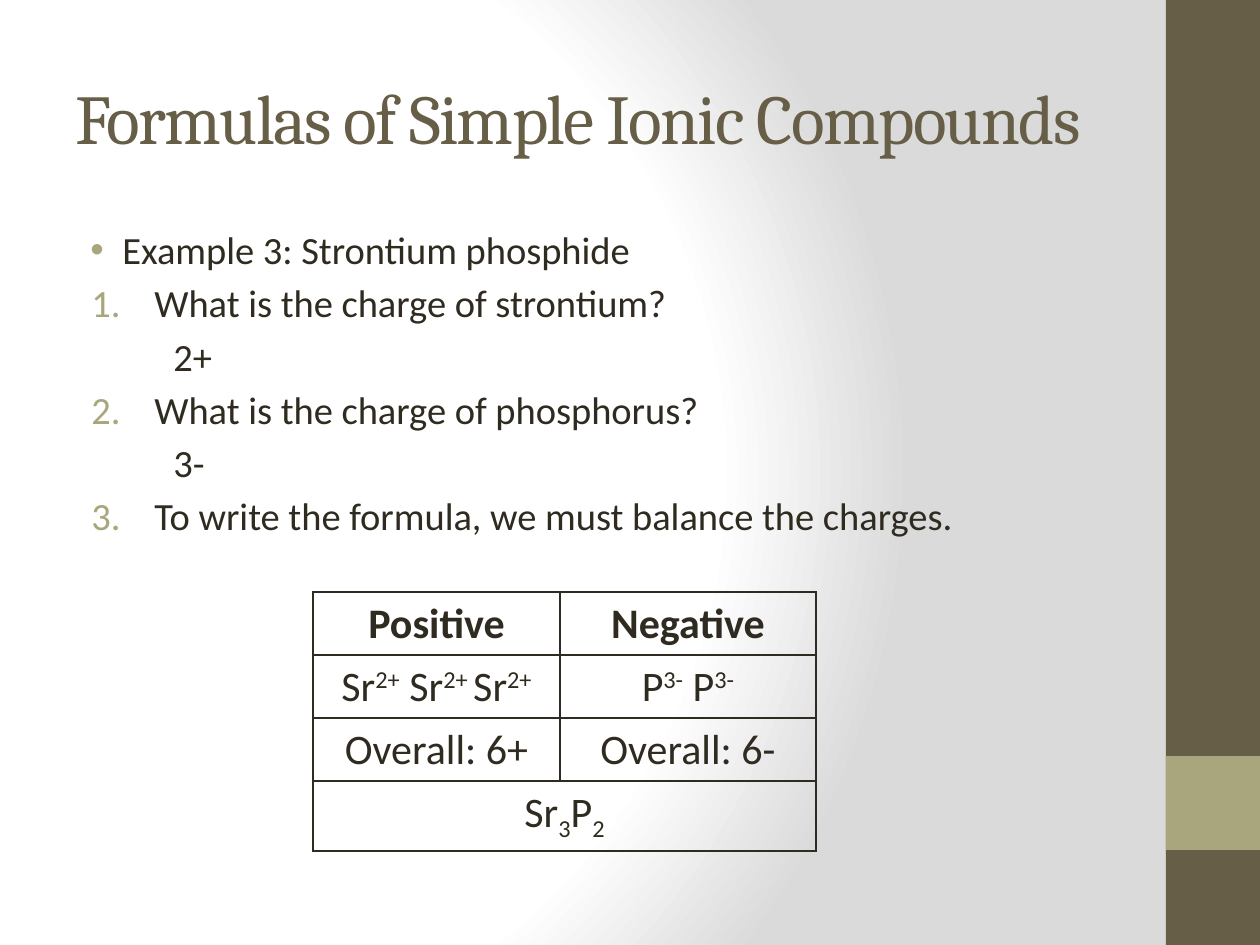
from pptx import Presentation
from pptx.dml.color import RGBColor
from pptx.enum.shapes import MSO_SHAPE
from pptx.enum.text import MSO_ANCHOR, PP_ALIGN
from pptx.oxml import parse_xml
from pptx.oxml.ns import nsdecls
from pptx.util import Pt
from lxml.etree import SubElement
from pptx.oxml.ns import qn

SCALE = 914400 // 126
HUES = {"brown": "675E47", "olive": "A9A57C", "ink": "2F2B20",
        "white": "FFFFFF", "gray": "DADADA"}
LINES = [
    ("Example 3: Strontium phosphide", "•"),
    ("What is the charge of strontium?", 1),
    ("2+", None),
    ("What is the charge of phosphorus?", 2),
    ("3-", None),
    ("To write the formula, we must balance the charges.", 3),
]
ROWS = [
    (["Positive", "Negative"], 0),
    (["Sr|2+| Sr|2+ |Sr|2+", "P|3-| P|3-"], 30),
    (["Overall: 6+", "Overall: 6-"], 0),
    (["Sr|3|P|2"], -25),
]


class Deck:
    def __init__(self, wide, high):
        self.file = Presentation()
        self.file.slide_width = wide * SCALE
        self.file.slide_height = high * SCALE
        self.slide = self.file.slides.add_slide(self.file.slide_layouts[5])

    def box(self, *px):
        return [n * SCALE for n in px]

    def hue(self, name):
        return RGBColor.from_string(HUES[name])

    def style(self, para, size, hue="ink", face="Calibri", bold=False):
        font = para.font
        font.size, font.name, font.bold = Pt(size), face, bold
        font.color.rgb = self.hue(hue)

    def back(self, stops, rect):
        marks = "".join(
            f'<a:gs pos="{pos}000"><a:srgbClr val="{HUES[hue]}"/></a:gs>'
            for pos, hue in stops)
        sides = " ".join(f'{side}="{n}000"' for side, n in zip("ltrb", rect))
        self.slide.element.cSld.insert(0, parse_xml(
            f'<p:bg {nsdecls("p", "a")}><p:bgPr><a:gradFill rotWithShape="1">'
            f'<a:gsLst>{marks}</a:gsLst><a:path path="circle">'
            f'<a:fillToRect {sides}/></a:path></a:gradFill>'
            '<a:effectLst/></p:bgPr></p:bg>'))

    def block(self, hue, *px):
        shape = self.slide.shapes.add_shape(MSO_SHAPE.RECTANGLE, *self.box(*px))
        shape.shadow.inherit = False
        shape.fill.solid()
        shape.fill.fore_color.rgb = self.hue(hue)
        shape.line.fill.background()

    def title(self, text, *px):
        shape = self.slide.shapes.title
        shape.left, shape.top, shape.width, shape.height = self.box(*px)
        frame = shape.text_frame
        frame.text, frame.word_wrap = text, True
        frame.vertical_anchor = MSO_ANCHOR.MIDDLE
        para = frame.paragraphs[0]
        para.alignment = PP_ALIGN.LEFT
        self.style(para, 40, "brown", "Cambria")
        para.runs[0].font._element.set("spc", "-100")

    def bullet(self, para, mark):
        left, first = {str: (47, -32), int: (79, -63)}.get(type(mark), (98, 0))
        props = para._p.get_or_add_pPr()
        props.set("marL", str(left * SCALE))
        props.set("indent", str(first * SCALE))
        if mark is None:
            SubElement(props, qn("a:buNone"))
            return
        tint = SubElement(props, qn("a:buClr"))
        SubElement(tint, qn("a:srgbClr"), val=HUES["olive"])
        if isinstance(mark, int):
            SubElement(props, qn("a:buFont"), typeface="+mj-lt")
            SubElement(props, qn("a:buAutoNum"), type="arabicPeriod",
                       startAt=str(mark))
        else:
            SubElement(props, qn("a:buFont"), typeface="Arial")
            SubElement(props, qn("a:buChar"), char=mark)

    def list(self, lines, *px):
        frame = self.slide.shapes.add_textbox(*self.box(*px)).text_frame
        frame.word_wrap = True
        for i, (text, mark) in enumerate(lines):
            para = frame.add_paragraph() if i else frame.paragraphs[0]
            para.text = text
            para.space_before = Pt(4)
            self.bullet(para, mark)
            self.style(para, 22)

    def edge(self, cell):
        props = cell._tc.get_or_add_tcPr()
        for i, side in enumerate(("lnL", "lnR", "lnT", "lnB")):
            props.insert(i, parse_xml(
                f'<a:{side} {nsdecls("a")} w="12700"><a:solidFill>'
                f'<a:srgbClr val="{HUES["ink"]}"/></a:solidFill></a:{side}>'))

    def table(self, rows, left, top, cols, high):
        grid = self.slide.shapes.add_table(
            len(rows), len(cols),
            *self.box(left, top, sum(cols), high * len(rows))).table
        grid.first_row = grid.horz_banding = False
        for col, wide in zip(grid.columns, cols):
            col.width = wide * SCALE
        for r, (texts, shift) in enumerate(rows):
            for c in range(len(cols)):
                cell = grid.cell(r, c)
                cell.fill.background()
                self.edge(cell)
            if len(texts) < len(cols):
                grid.cell(r, 0).merge(grid.cell(r, len(cols) - 1))
            for c, text in enumerate(texts):
                para = grid.cell(r, c).text_frame.paragraphs[0]
                para.alignment = PP_ALIGN.CENTER
                for i, part in enumerate(text.split("|")):
                    run = para.add_run()
                    run.text = part
                    if i % 2:
                        run.font._element.set("baseline", f"{shift}000")
                self.style(para, 24, bold=r == 0)


def main():
    deck = Deck(1260, 945)
    deck.back([(0, "white"), (75, "white"), (100, "gray")], (20, 50, 100, 50))
    deck.block("brown", 1166, 0, 94, 945)
    deck.block("olive", 1166, 756, 94, 94)
    deck.title("Formulas of Simple Ionic Compounds", 63, 38, 1115, 158)
    deck.list(LINES, 63, 220, 1050, 662)
    deck.table(ROWS, 313, 592, (247, 256), 63)
    deck.file.save("out.pptx")


if __name__ == "__main__":
    main()
